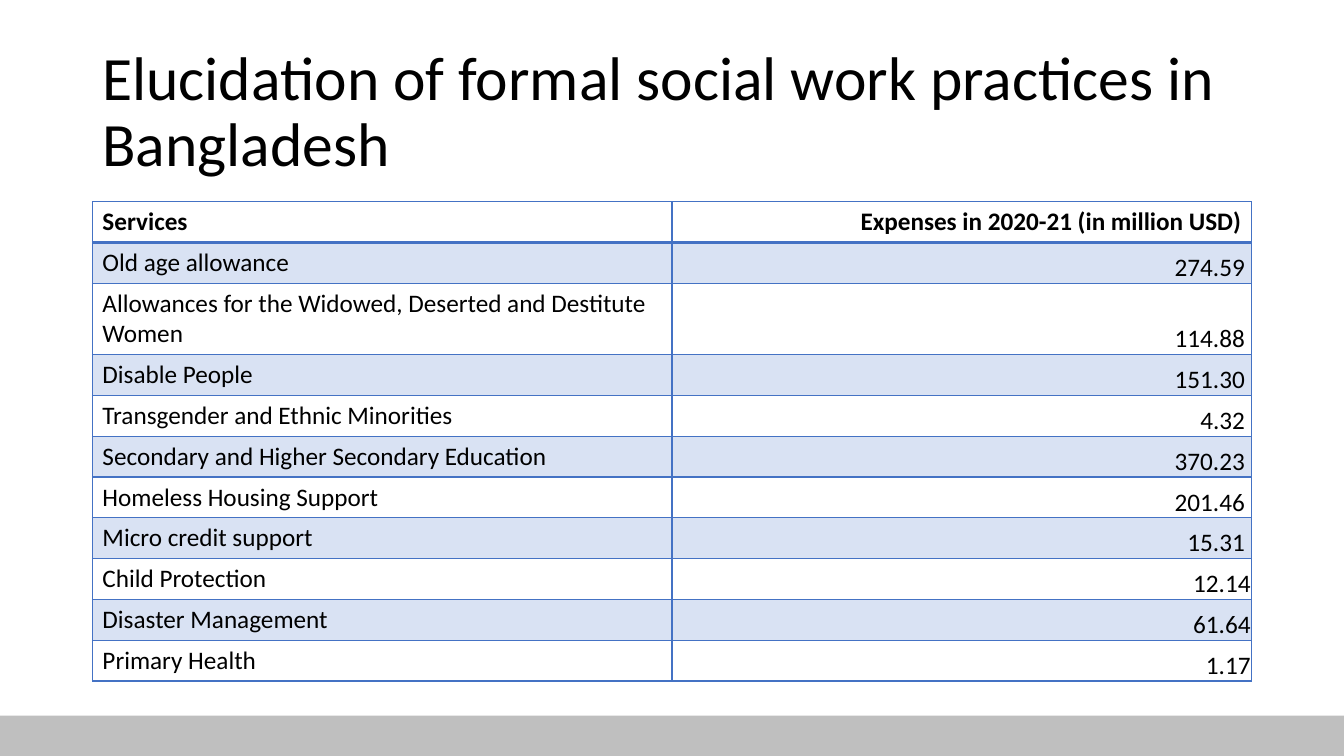
from lxml.etree import SubElement as Sub, Element as Elem
from pptx import Presentation as Deck
from pptx.dml.color import RGBColor as Rgb
from pptx.enum.shapes import MSO_SHAPE as Kind
from pptx.enum.text import MSO_ANCHOR as Anchor, PP_ALIGN as Align
from pptx.oxml.ns import qn
from pptx.util import Inches, Pt

WIDE, HIGH = Inches(13.33), Inches(7.5)
COL, ROW = WIDE / 160, HIGH / 150
LEFT, SPAN = 11, 138
FONT = "Calibri"
HUES = {"ink": "000000", "blue": "4472C4", "grey": "BFBFBF"}
HEAD = ("Services", "Expenses in 2020-21 (in million USD)")
COSTS = [
    ("Old age allowance", "274.59 "),
    ("Allowances for the Widowed, Deserted and Destitute Women", "114.88 "),
    ("Disable People", "151.30 "),
    ("Transgender and Ethnic Minorities", "4.32 "),
    ("Secondary and Higher Secondary Education", "370.23 "),
    ("Homeless Housing Support", "201.46 "),
    ("Micro credit support", "15.31 "),
    ("Child Protection", "12.14"),
    ("Disaster Management", "61.64"),
    ("Primary Health", "1.17"),
]
LONG = 2
TALL = 1.75


def area(col, row, wide, high):
    return int(col * COL), int(row * ROW), int(wide * COL), int(high * ROW)


def write(frame, text, size=18, bold=False, align=Align.LEFT, lead=None):
    frame.word_wrap = True
    para = frame.paragraphs[0]
    para.alignment = align
    para.line_spacing = lead
    run = para.add_run()
    run.text = text
    run.font.name = FONT
    run.font.size = Pt(size)
    run.font.bold = bold
    run.font.color.rgb = Rgb.from_string(HUES["ink"])


def add_bar(slide):
    bar = slide.shapes.add_shape(Kind.RECTANGLE, *area(0, 142, 160, 8))
    bar.shadow.inherit = False
    bar.fill.solid()
    bar.fill.fore_color.rgb = Rgb.from_string(HUES["grey"])
    bar.line.fill.background()


def add_title(slide, text):
    frame = slide.shapes.add_textbox(*area(LEFT, 8, SPAN, 29)).text_frame
    frame.vertical_anchor = Anchor.MIDDLE
    write(frame, text, size=44, lead=0.9)


def tint(cell, hue, share):
    cell.fill.solid()
    cell.fill.fore_color.rgb = Rgb.from_string(hue)
    tone = cell._tc.tcPr.find(f"{qn('a:solidFill')}/{qn('a:srgbClr')}")
    Sub(tone, qn("a:alpha"), val=str(share * 1000))


def edge(cell, **sides):
    props = cell._tc.get_or_add_tcPr()
    for spot, (side, size) in enumerate(sides.items()):
        line = Elem(qn(f"a:ln{side}"), w=str(Pt(size)))
        Sub(Sub(line, qn("a:solidFill")), qn("a:srgbClr"), val=HUES["blue"])
        props.insert(spot, line)


def style(cell, row, col):
    if row % 2:
        tint(cell, HUES["blue"], 20)
    else:
        cell.fill.background()
    edge(cell, L=1, R=1, T=2 if row == 1 else 1, B=2 if row == 0 else 1)
    if row and col:
        cell.vertical_anchor = Anchor.BOTTOM
        cell.margin_left = cell.margin_right = cell.margin_top = Inches(0.01)
        cell.margin_bottom = 0


def add_grid(slide, rows):
    place = area(LEFT, 40, SPAN, 95.2)
    grid = slide.shapes.add_table(len(rows), len(HEAD), *place).table
    grid.first_row = grid.horz_banding = False
    unit = place[3] / (len(rows) - 1 + TALL)
    for row, texts in enumerate(rows):
        grid.rows[row].height = int(unit * (TALL if row == LONG else 1))
        for col, text in enumerate(texts):
            cell = grid.cell(row, col)
            style(cell, row, col)
            write(cell.text_frame, text, bold=row == 0,
                  align=Align.RIGHT if col else Align.LEFT)


def main():
    deck = Deck()
    deck.slide_width, deck.slide_height = WIDE, HIGH
    slide = deck.slides.add_slide(deck.slide_layouts[6])
    add_bar(slide)
    add_title(slide, "Elucidation of formal social work practices in Bangladesh")
    add_grid(slide, [HEAD] + COSTS)
    deck.save("out.pptx")


if __name__ == "__main__":
    main()
